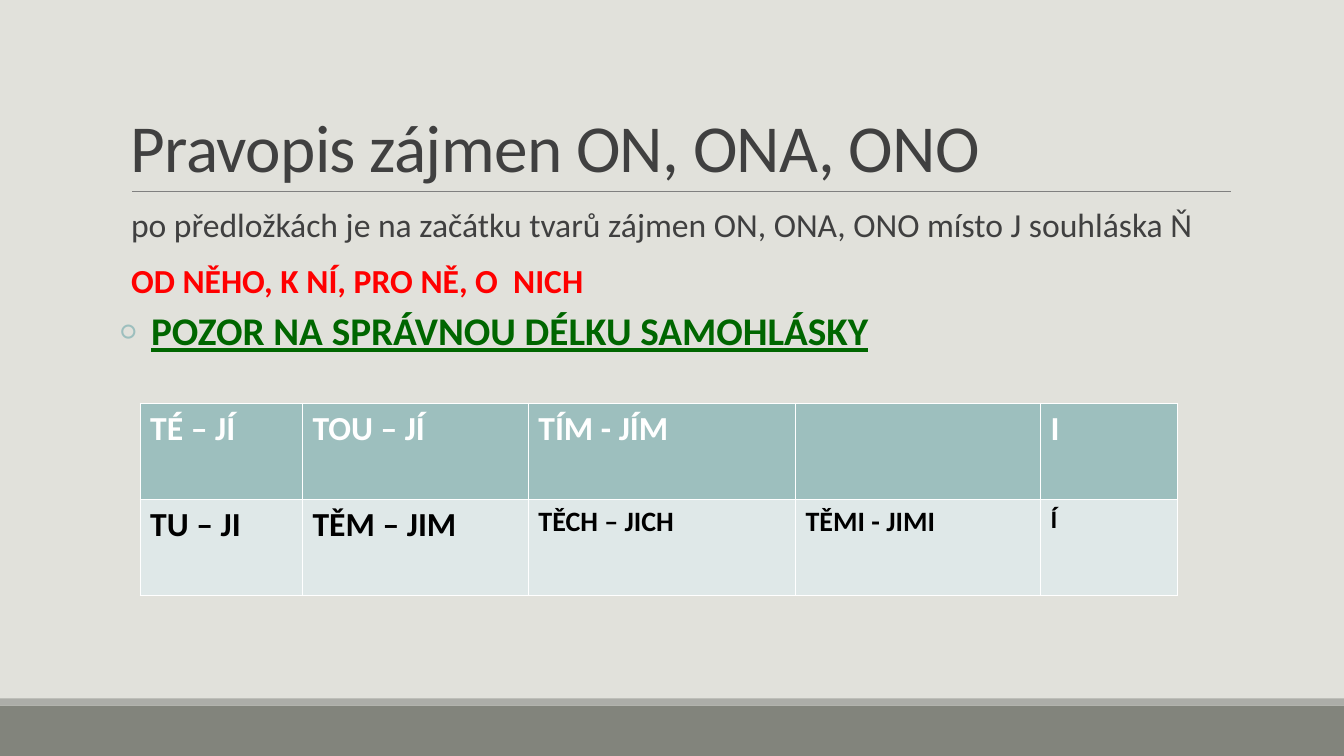
"""Build a Czech grammar slide on the spelling of the pronouns ON, ONA, ONO."""
from lxml import etree
from pptx import Presentation
from pptx.dml.color import RGBColor
from pptx.enum import shapes, text
from pptx.oxml import ns
from pptx.util import Inches, Pt

COLOURS = {
    "background": "E1E1DB", "footer": "82847C", "stripe": "ACADA8",
    "rule": "808080", "text": "404040", "example": "FF0000",
    "warning": "006600", "accent": "9DBFBE", "pale": "DFE8E8",
    "white": "FFFFFF", "black": "000000",
}
COLUMN_WIDTHS = [1.61, 2.24, 2.65, 2.43, 1.36]
ROW_HEIGHT = 0.955
ROWS = [
    ("accent", "white", [("TÉ – JÍ", 24), ("TOU – JÍ", 24), ("TÍM - JÍM", 24),
                         ("", 24), ("I", 24)]),
    ("pale", "black", [("TU – JI", 24), ("TĚM – JIM", 24), ("TĚCH – JICH", 20),
                       ("TĚMI - JIMI", 20), ("Í", 18)]),
]
BODY = [
    ("po předložkách je na začátku tvarů zájmen ON, ONA, ONO místo J souhláska Ň",
     24, "text", {}, {"space_before": Pt(12), "space_after": Pt(2)}),
    ("OD NĚHO, K NÍ, PRO NĚ, O  NICH",
     24, "example", {"bold": True}, {"space_before": Pt(12), "space_after": Pt(2)}),
    ("POZOR NA SPRÁVNOU DÉLKU SAMOHLÁSKY",
     28, "warning", {"bold": True, "underline": True},
     {"space_before": Pt(6), "space_after": Pt(4)}),
]


def rgb(name):
    return RGBColor.from_string(COLOURS[name])


def apply(target, values):
    for key, value in values.items():
        setattr(target, key, value)


def add_child(parent, tag, **attributes):
    return etree.SubElement(parent, ns.qn(tag), attributes)


def add_bar(page, top, height, colour):
    bar = page.shapes.add_shape(shapes.MSO_SHAPE.RECTANGLE, Inches(0), Inches(top),
                                Inches(13.33), Inches(height))
    bar.shadow.inherit = False
    bar.fill.solid()
    bar.fill.fore_color.rgb = rgb(colour)
    bar.line.fill.background()


def add_rule(page):
    rule = page.shapes.add_connector(shapes.MSO_CONNECTOR.STRAIGHT, Inches(1.31),
                                     Inches(1.9), Inches(12.21), Inches(1.9))
    rule.line.color.rgb = rgb("rule")
    rule.line.width = Pt(0.5)
    add_child(rule._element.spPr, "a:effectLst")


def add_box(page, top, height, frame_format):
    box = page.shapes.add_textbox(Inches(1.2), Inches(top), Inches(11), Inches(height))
    apply(box.text_frame, {"word_wrap": True, **frame_format})
    return box.text_frame


def add_span(para, words, size, colour, **font_format):
    span = para.add_run()
    span.text = words
    apply(span.font, {"name": "Calibri", "size": Pt(size), **font_format})
    span.font.color.rgb = rgb(colour)
    return span


def set_indent(para, left, bullet=None):
    properties = para._p.get_or_add_pPr()
    properties.set("marL", str(Inches(left)))
    properties.set("indent", str(-Inches(left) if bullet else 0))
    if bullet:
        colour = add_child(properties, "a:buClr")
        add_child(colour, "a:srgbClr", val=COLOURS["accent"])
        add_child(properties, "a:buSzPct", val="70000")
        add_child(properties, "a:buFont", typeface="Calibri")
        add_child(properties, "a:buChar", char=bullet)


def add_title(page):
    frame = add_box(page, 0.31, 1.59, {"vertical_anchor": text.MSO_ANCHOR.BOTTOM})
    para = frame.paragraphs[0]
    para.line_spacing = 0.85
    span = add_span(para, "Pravopis zájmen ON, ONA, ONO", 48, "text")
    span.font._element.set("spc", "-50")


def add_body(page):
    frame = add_box(page, 2.02, 4.4, {"margin_left": 0, "margin_right": 0})
    for index, (words, size, colour, font_format, spacing) in enumerate(BODY):
        para = frame.add_paragraph() if index else frame.paragraphs[0]
        apply(para, {"line_spacing": 0.9, **spacing})
        if colour == "warning":
            set_indent(para, 0.3, "○")
        else:
            set_indent(para, 0.1)
        add_span(para, words, size, colour, **font_format)


def set_borders(cell):
    properties = cell._tc.get_or_add_tcPr()
    for position, side in enumerate(("a:lnL", "a:lnR", "a:lnT", "a:lnB")):
        line = etree.Element(ns.qn(side), w=str(Pt(1)))
        fill = add_child(line, "a:solidFill")
        add_child(fill, "a:srgbClr", val=COLOURS["white"])
        properties.insert(position, line)


def add_pronoun_table(page):
    table = page.shapes.add_table(
        len(ROWS), len(COLUMN_WIDTHS), Inches(1.39), Inches(4),
        Inches(sum(COLUMN_WIDTHS)), Inches(ROW_HEIGHT * len(ROWS))).table
    for column, width in zip(table.columns, COLUMN_WIDTHS):
        column.width = Inches(width)
    for row, (fill, colour, entries) in enumerate(ROWS):
        for column, (words, size) in enumerate(entries):
            cell = table.cell(row, column)
            cell.fill.solid()
            cell.fill.fore_color.rgb = rgb(fill)
            set_borders(cell)
            if words:
                add_span(cell.text_frame.paragraphs[0], words, size, colour, bold=True)


def main():
    deck = Presentation()
    apply(deck, {"slide_width": Inches(13.33), "slide_height": Inches(7.5)})
    page = deck.slides.add_slide(deck.slide_layouts[6])
    page.background.fill.solid()
    page.background.fill.fore_color.rgb = rgb("background")
    add_bar(page, 7, 0.5, "footer")
    add_bar(page, 6.93, 0.07, "stripe")
    add_rule(page)
    add_title(page)
    add_body(page)
    add_pronoun_table(page)
    deck.save("out.pptx")


if __name__ == "__main__":
    main()
